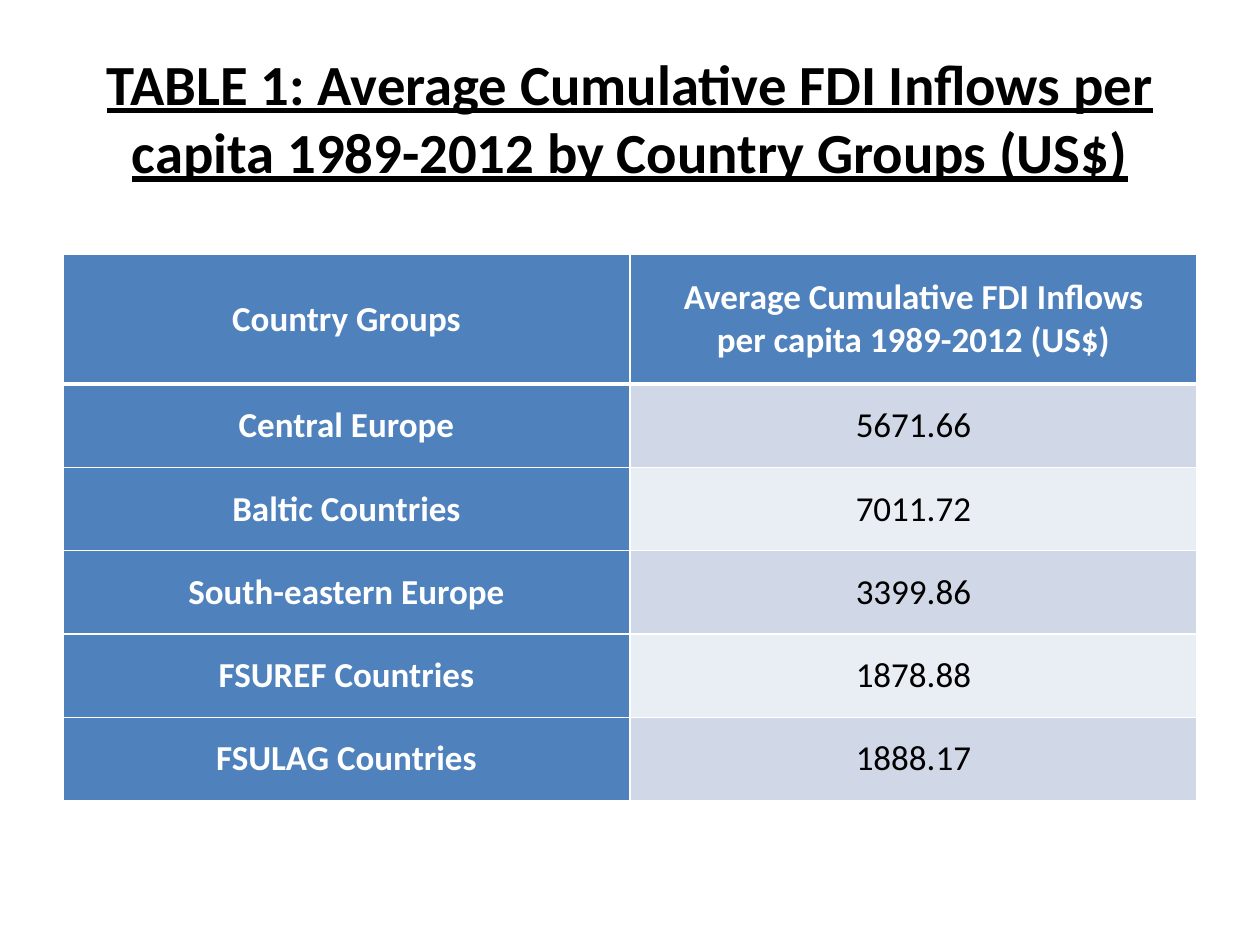
from lxml.etree import SubElement
from pptx import Presentation
from pptx.dml.color import RGBColor
from pptx.enum.text import MSO_ANCHOR as Anchor, PP_ALIGN as Align
from pptx.oxml.ns import qn
from pptx.util import Pt

FONT = "Calibri"
COLOURS = {
    "black": "000000",
    "white": "FFFFFF",
    "header": "4F81BD",
    "band_dark": "D0D8E8",
    "band_light": "E9EDF4",
}
TITLE = "TABLE 1: Average Cumulative FDI Inflows per capita 1989-2012 by Country Groups (US$)"
HEADINGS = (
    ["Country Groups"],
    ["Average Cumulative FDI Inflows", "per capita 1989-2012 (US$)"],
)
INFLOWS = (
    ("Central Europe", "5671.66"),
    ("Baltic Countries", "7011.72"),
    ("South-eastern Europe", "3399.86"),
    ("FSUREF Countries", "1878.88"),
    ("FSULAG Countries", "1888.17"),
)


def colour(name):
    return RGBColor.from_string(COLOURS[name])


def add_span(para, text, size, ink, bold):
    para.alignment = Align.CENTER
    span = para.add_run()
    span.text = text
    span.font.name = FONT
    span.font.size = Pt(size)
    span.font.bold = bold
    span.font.color.rgb = colour(ink)
    return span


def add_title(page):
    box = page.shapes.title
    box.left, box.top, box.width, box.height = Pt(36), Pt(21.6), Pt(648), Pt(90)
    frame = box.text_frame
    frame.word_wrap = True
    frame.vertical_anchor = Anchor.MIDDLE
    span = add_span(frame.paragraphs[0], TITLE, 32.4, "black", True)
    span.font.underline = True


def add_borders(cell, bottom):
    properties = cell._tc.get_or_add_tcPr()
    for side, width in (("lnL", 1), ("lnR", 1), ("lnT", 1), ("lnB", bottom)):
        line = SubElement(properties, qn(f"a:{side}"), w=str(Pt(width)))
        fill = SubElement(line, qn("a:solidFill"))
        SubElement(fill, qn("a:srgbClr"), val=COLOURS["white"])


def format_cell(cell, lines, fill, ink, bold, bottom=1):
    cell.vertical_anchor = Anchor.MIDDLE
    cell.margin_left = cell.margin_right = Pt(5)
    cell.margin_top = cell.margin_bottom = Pt(0)
    add_borders(cell, bottom)
    cell.fill.solid()
    cell.fill.fore_color.rgb = colour(fill)
    frame = cell.text_frame
    for index, text in enumerate(lines):
        para = frame.add_paragraph() if index else frame.paragraphs[0]
        add_span(para, text, 20, ink, bold)


def add_inflow_table(page):
    header_height, row_height = 74, 47.6
    height = header_height + row_height * len(INFLOWS)
    frame = page.shapes.add_table(
        len(INFLOWS) + 1, 2, Pt(36), Pt(145.5), Pt(648), Pt(height)
    )
    table = frame.table
    for index, row in enumerate(table.rows):
        row.height = Pt(row_height if index else header_height)
    for column, lines in enumerate(HEADINGS):
        format_cell(table.cell(0, column), lines, "header", "white", True, 3)
    for index, (group, value) in enumerate(INFLOWS, 1):
        band = "band_dark" if index % 2 else "band_light"
        format_cell(table.cell(index, 0), [group], "header", "white", True)
        format_cell(table.cell(index, 1), [value], band, "black", False)
    for cell in table.rows[1].cells:
        top = cell._tc.tcPr.find(qn("a:lnT"))
        top.set("w", str(Pt(3)))


def main():
    deck = Presentation()
    deck.slide_width, deck.slide_height = Pt(720), Pt(540)
    page = deck.slides.add_slide(deck.slide_layouts[5])
    add_title(page)
    add_inflow_table(page)
    deck.save("out.pptx")


if __name__ == "__main__":
    main()
